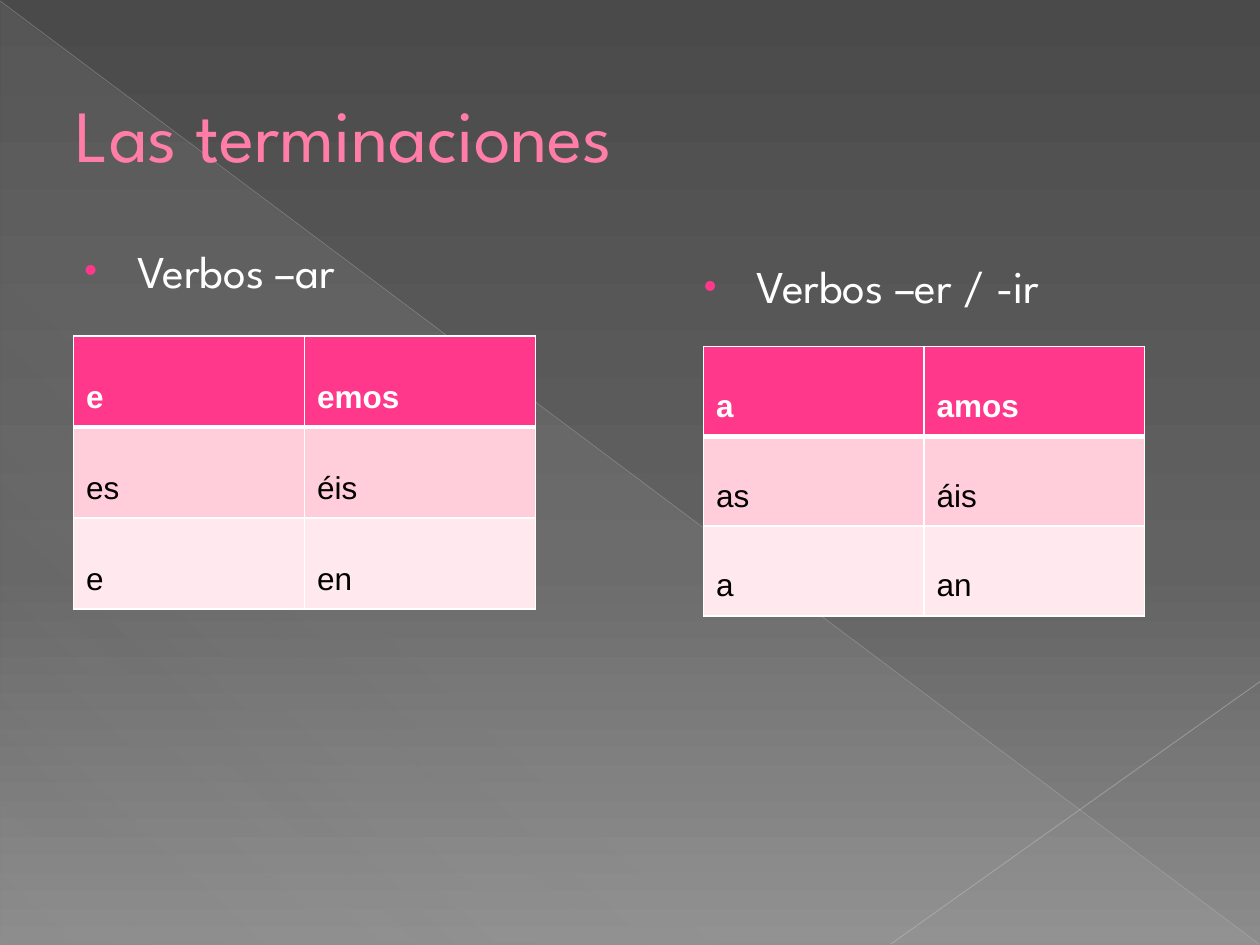
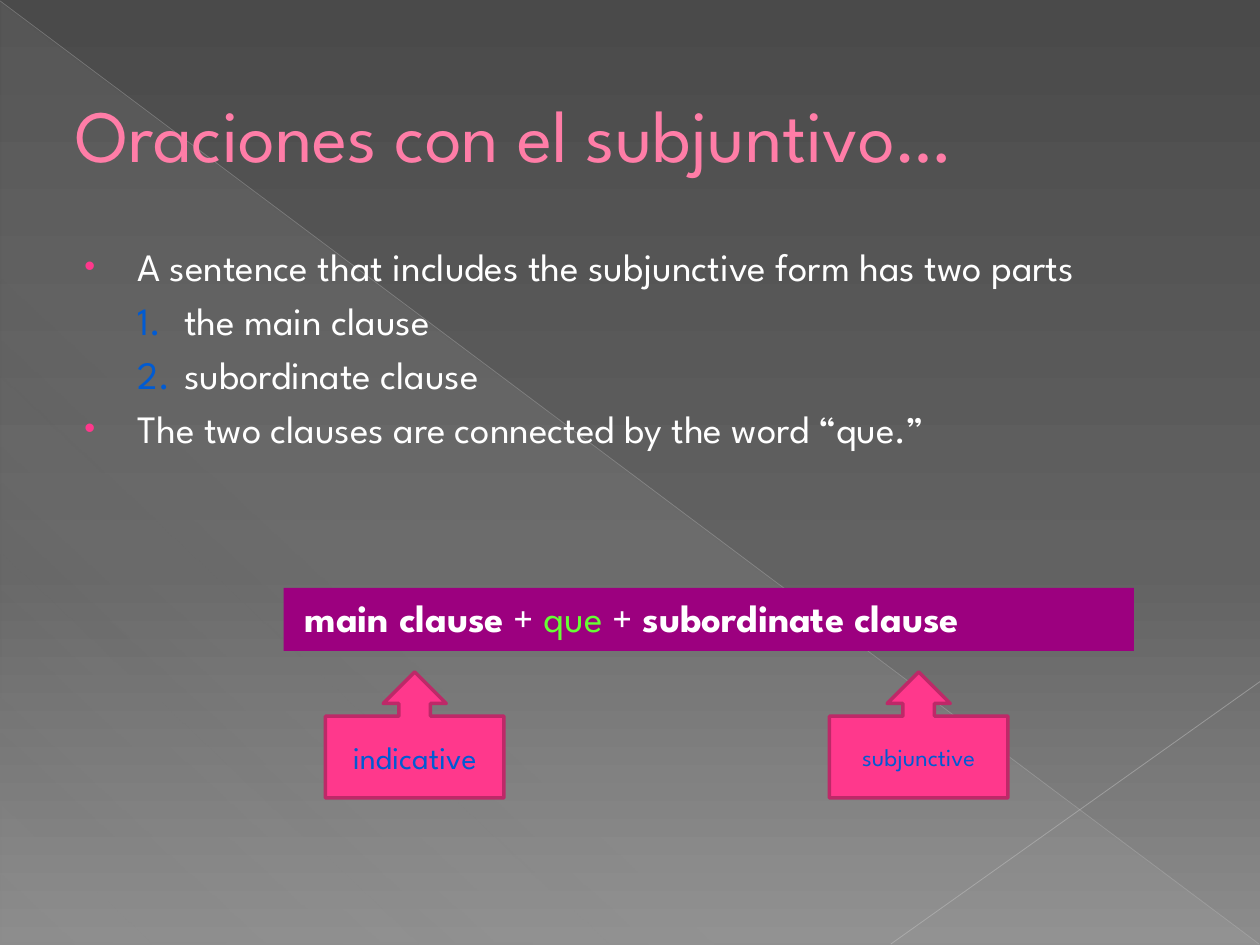
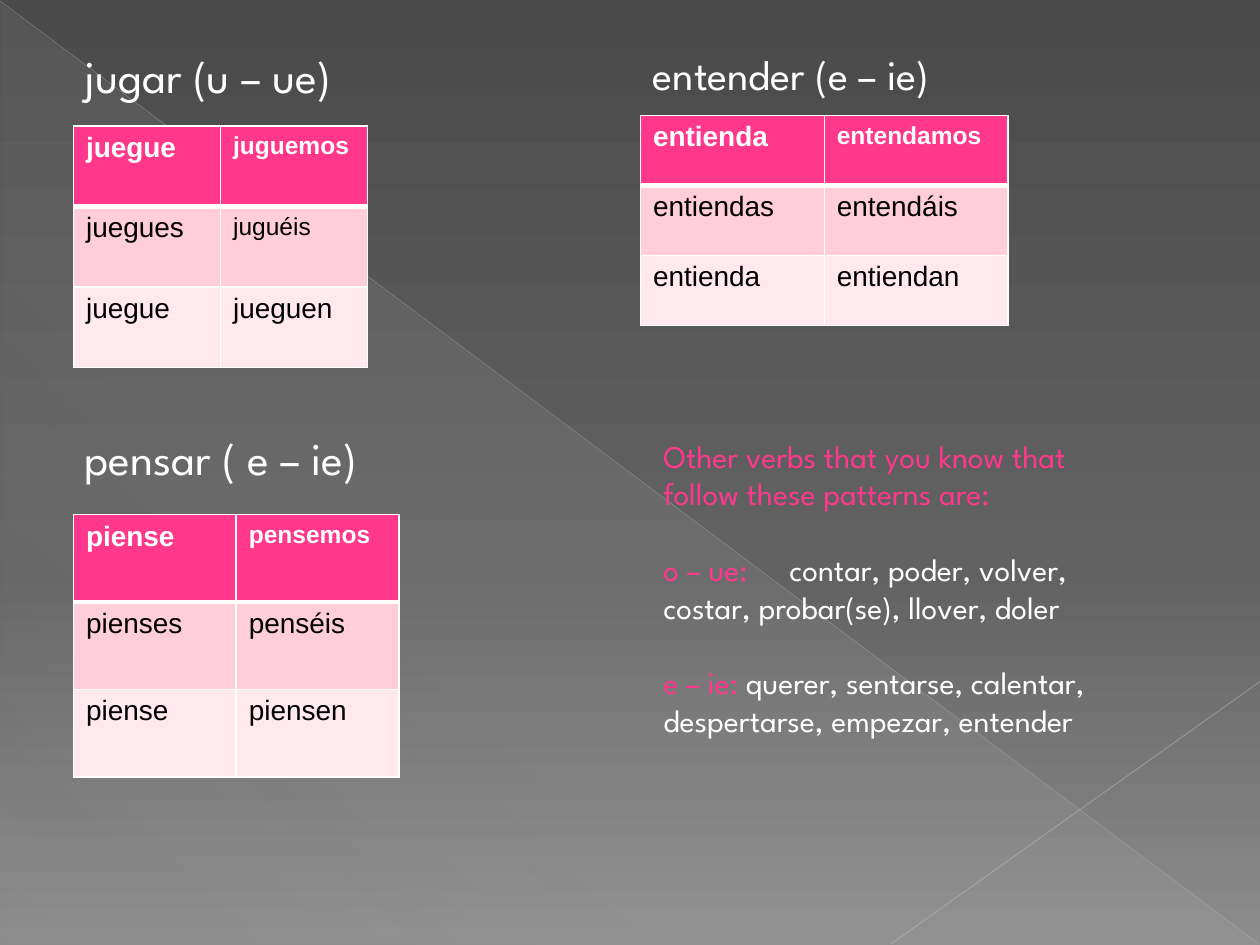
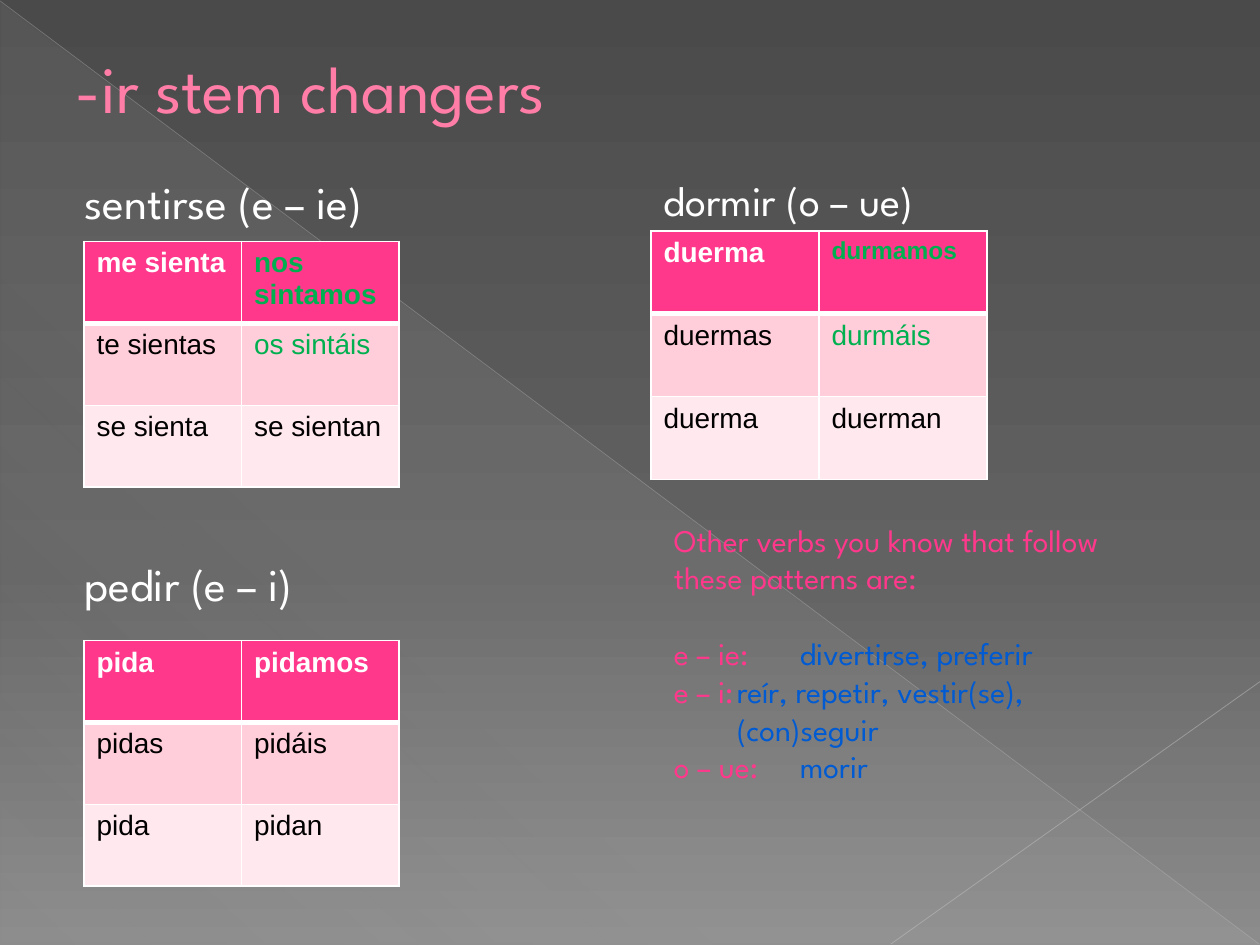
from lxml.etree import SubElement
from pptx import Presentation
from pptx.dml.color import RGBColor
from pptx.enum.shapes import MSO_CONNECTOR, MSO_SHAPE
from pptx.enum.text import MSO_ANCHOR, MSO_AUTO_SIZE, PP_ALIGN
from pptx.oxml import parse_xml
from pptx.oxml.ns import nsdecls, qn
from pptx.util import Pt

COLOURS = {
    "white": "FFFFFF",
    "black": "000000",
    "title": "FF7DA7",
    "title outline": "B12761",
    "pink": "FF388C",
    "pink edge": "BD2968",
    "odd row": "FFCEDA",
    "even row": "FFE8EE",
    "purple": "9C007F",
    "blue": "005BD3",
    "lime": "66FF33",
    "green": "00B050",
    "background top": "4A4A4A",
    "background middle": "626262",
    "background bottom": "8C8C8C",
    "triangle": "D2D2D2",
    "long line": "BFBFBF",
    "short line": "C6C6C6",
}
TEXT_FONT = "League Spartan"
TABLE_FONT = "Arial"
LINE_HEIGHT = 1.2
HANGING_MARGIN, HANGING_INDENT = 35.28, -30.24
NUMBERED_MARGIN = 62
TITLE_AND_CONTENT, TWO_CONTENT = 1, 3

# Verb forms that are set smaller, and those with the second stem change
SMALL_FORMS = {"juguemos", "juguéis", "pensemos", "entendamos", "durmamos"}
CHANGED_FORMS = {"nos sintamos", "os sintáis", "durmamos", "durmáis"}


def rgb(colour):
    return RGBColor.from_string(COLOURS[colour])


# Text

def format_run(run, size, colour="white", bold=False, font=TEXT_FONT):
    run.font.name = font
    run.font.size = Pt(size)
    run.font.bold = bold
    run.font.color.rgb = rgb(colour)


def write_parts(paragraph, parts, size):
    """Write (text, colour, bold) parts as the runs of one paragraph."""
    for text, colour, *bold in parts:
        run = paragraph.add_run()
        run.text = text
        format_run(run, size, colour, bool(bold))


def set_hanging(paragraph, size, bullet=False, margin=HANGING_MARGIN,
                indent=HANGING_INDENT, extra_space=0):
    paragraph.space_before = Pt(0.2 * size + extra_space)
    properties = paragraph._p.get_or_add_pPr()
    properties.set("marL", str(Pt(margin)))
    properties.set("indent", str(Pt(indent)))
    if bullet:
        colour = SubElement(properties, qn("a:buClr"))
        SubElement(colour, qn("a:srgbClr"), val=COLOURS["pink"])
        SubElement(properties, qn("a:buSzPct"), val="80000")
        SubElement(properties, qn("a:buChar"), char="•")
    else:
        SubElement(properties, qn("a:buNone"))


def place(shape, left, top, width, height):
    shape.left, shape.top = Pt(left), Pt(top)
    shape.width, shape.height = Pt(width), Pt(height)


def place_body(slide, index, *box):
    body = slide.placeholders[index]
    place(body, *box)
    body.text_frame.auto_size = MSO_AUTO_SIZE.NONE
    return body


def set_title(slide, text, size=42, height=110):
    title = slide.shapes.title
    place(title, 36, 21, 648, height)
    title.text_frame.text = text
    title.text_frame.auto_size = MSO_AUTO_SIZE.NONE
    paragraph = title.text_frame.paragraphs[0]
    paragraph.alignment = PP_ALIGN.LEFT
    run = paragraph.runs[0]
    format_run(run, size, "title")
    run.font._element.insert(0, parse_xml(
        f'<a:ln {nsdecls("a")} w="{Pt(0.5)}"><a:solidFill>'
        f'<a:srgbClr val="{COLOURS["title outline"]}"/></a:solidFill></a:ln>'))


def add_bullet_heading(slide, index, text, *box):
    body = place_body(slide, index, *box)
    body.text_frame.text = text
    paragraph = body.text_frame.paragraphs[0]
    set_hanging(paragraph, 26, bullet=True)
    format_run(paragraph.runs[0], 26)


def add_verb_headings(slide, upper, lower, *box):
    """Two headings in one body, with room for a table between them."""
    size = 26
    table_room = 5 * (LINE_HEIGHT + 0.2) * size
    body = place_body(slide, 1, *box)
    body.text_frame.text = f"{upper}\n{lower}"
    for paragraph, room in zip(body.text_frame.paragraphs, (0, table_room)):
        set_hanging(paragraph, size, extra_space=room)
        format_run(paragraph.runs[0], size)


def add_text_box(slide, paragraphs, size, *box):
    """Write (space before, parts) paragraphs in a text box."""
    text_box = slide.shapes.add_textbox(*map(Pt, box))
    frame = text_box.text_frame
    frame.word_wrap = True
    for number, (space, parts) in enumerate(paragraphs):
        paragraph = frame.add_paragraph() if number else frame.paragraphs[0]
        paragraph.space_before = Pt(space)
        write_parts(paragraph, parts, size)


# Tables

def set_borders(cell, bottom_width):
    properties = cell._tc.get_or_add_tcPr()
    widths = {"lnL": 1, "lnR": 1, "lnT": 1, "lnB": bottom_width}
    for position, (side, width) in enumerate(widths.items()):
        properties.insert(position, parse_xml(
            f'<a:{side} {nsdecls("a")} w="{Pt(width)}"><a:solidFill>'
            f'<a:srgbClr val="{COLOURS["white"]}"/></a:solidFill></a:{side}>'))


def add_verb_table(slide, rows, left, top, width, height, size=16, low_text=False):
    frame = slide.shapes.add_table(len(rows), 2, Pt(left), Pt(top), Pt(width), Pt(height))
    table = frame.table
    fills = ("pink", "odd row", "even row")
    for row_index, forms in enumerate(rows):
        header = row_index == 0
        table.rows[row_index].height = Pt(height / len(rows))
        for column_index, form in enumerate(forms):
            cell = table.cell(row_index, column_index)
            cell.fill.solid()
            cell.fill.fore_color.rgb = rgb(fills[row_index])
            set_borders(cell, 3 if header else 1)
            if low_text:
                cell.vertical_anchor = MSO_ANCHOR.BOTTOM
                cell.margin_bottom = Pt(7)
            cell.text_frame.text = form
            colour = "white" if header else "black"
            if form in CHANGED_FORMS:
                colour = "green"
            form_size = 14 if form in SMALL_FORMS else size
            format_run(cell.text_frame.paragraphs[0].runs[0], form_size,
                       colour, header, TABLE_FONT)


# Shared background

def set_gradient(fill, element, stops, angle):
    """Fill with (position, colour, opacity) stops; the angle runs clockwise."""
    fill.gradient()
    fill.gradient_angle = 360 - angle
    stop_list = element.find(".//" + qn("a:gsLst"))
    for stop in list(stop_list):
        stop_list.remove(stop)
    for position, colour, opacity in stops:
        stop = SubElement(stop_list, qn("a:gs"), pos=str(position * 1000))
        stop_colour = SubElement(stop, qn("a:srgbClr"), val=COLOURS[colour])
        SubElement(stop_colour, qn("a:alpha"), val=str(opacity * 1000))


def add_thin_line(slide, ends, colour, width, opacity):
    line = slide.shapes.add_connector(MSO_CONNECTOR.STRAIGHT, *map(Pt, ends))
    line.line.color.rgb = rgb(colour)
    line.line.width = Pt(width)
    line_colour = line.element.find(".//" + qn("a:srgbClr"))
    SubElement(line_colour, qn("a:alpha"), val=str(opacity * 1000))
    SubElement(line.element.spPr, qn("a:effectLst"))
    return line


def decorate_master(presentation, slide):
    """Draw the shared shapes on a slide and move them to the master."""
    master = presentation.slide_master
    set_gradient(master.background.fill, master.element, [
        (0, "background top", 100),
        (60, "background middle", 100),
        (100, "background bottom", 100)], 90)
    triangle = slide.shapes.add_shape(
        MSO_SHAPE.RIGHT_TRIANGLE, Pt(0.5), Pt(1.2), Pt(719.5), Pt(538.8))
    triangle.shadow.inherit = False
    triangle.line.fill.background()
    set_gradient(triangle.fill, triangle.element, [
        (0, "triangle", 10), (70, "triangle", 8), (100, "triangle", 1)], 133)
    decorations = [
        triangle,
        add_thin_line(slide, (0, 0.5, 719.5, 539.5), "long line", 0.39, 35),
        add_thin_line(slide, (720, 389.5, 509, 539.5), "short line", 0.47, 45),
    ]
    for position, shape in enumerate(decorations, start=2):
        master.shapes.element.insert(position, shape.element)


# Slides

def build_endings(slide):
    set_title(slide, "Las terminaciones")
    add_bullet_heading(slide, 1, "Verbos –ar", 36, 135, 318, 356)
    add_bullet_heading(slide, 2, "Verbos –er / -ir", 390, 144, 318, 356)
    add_verb_table(slide, [("e", "emos"), ("es", "éis"), ("e", "en")],
                   42, 192, 264, 156, size=18, low_text=True)
    add_verb_table(slide, [("a", "amos"), ("as", "áis"), ("a", "an")],
                   402, 198, 252, 154, size=18, low_text=True)


def add_callout(slide, text, size, left):
    callout = slide.shapes.add_shape(
        MSO_SHAPE.UP_ARROW_CALLOUT, Pt(left), Pt(384), Pt(102), Pt(72))
    callout.shadow.inherit = False
    callout.fill.solid()
    callout.fill.fore_color.rgb = rgb("pink")
    callout.line.color.rgb = rgb("pink edge")
    callout.line.width = Pt(2)
    callout.text_frame.text = text
    callout.text_frame.vertical_anchor = MSO_ANCHOR.MIDDLE
    paragraph = callout.text_frame.paragraphs[0]
    paragraph.alignment = PP_ALIGN.CENTER
    format_run(paragraph.runs[0], size, "blue")


def build_sentences(slide):
    size = 22.1
    set_title(slide, "Oraciones con el subjuntivo…")

    # Bulleted points with the two numbered clauses
    frame = place_body(slide, 1, 36, 135, 588, 182).text_frame
    points = [
        [("A sentence that includes the subjunctive form has two parts", "white")],
        [("1.", "blue"), ("\tthe main clause", "white")],
        [("2.", "blue"), ("\tsubordinate clause", "white")],
        [("The two clauses are connected by the word “que.”", "white")],
    ]
    for number, parts in enumerate(points):
        paragraph = frame.add_paragraph() if number else frame.paragraphs[0]
        if len(parts) > 1:
            set_hanging(paragraph, size, margin=NUMBERED_MARGIN,
                        indent=HANGING_MARGIN - NUMBERED_MARGIN)
        else:
            set_hanging(paragraph, size, bullet=True)
        write_parts(paragraph, parts, size)

    # Formula bar
    formula = place_body(slide, 2, 162, 336, 486, 36)
    formula.fill.solid()
    formula.fill.fore_color.rgb = rgb("purple")
    paragraph = formula.text_frame.paragraphs[0]
    set_hanging(paragraph, size)
    write_parts(paragraph, [
        ("main clause", "white", True), (" + ", "white"), ("que", "lime"),
        (" + ", "white"), ("subordinate clause", "white", True)], size)

    add_callout(slide, "indicative", 18, 186)
    add_callout(slide, "subjunctive", 14, 474)


def build_stem_changers(slide):
    title = slide.shapes.title.element
    title.getparent().remove(title)
    add_verb_headings(slide, "jugar (u – ue)", "pensar ( e – ie)", 36, 24, 252, 468)
    add_verb_table(slide, [("juegue", "juguemos"), ("juegues", "juguéis"),
                           ("juegue", "jueguen")], 42, 72, 168, 138)
    add_verb_table(slide, [("piense", "pensemos"), ("pienses", "penséis"),
                           ("piense", "piensen")], 42, 294, 186, 150)
    add_text_box(slide, [(0, [("entender (e – ie)", "white")])], 24, 366, 24, 282, 37)
    add_verb_table(slide, [("entienda", "entendamos"), ("entiendas", "entendáis"),
                           ("entienda", "entiendan")], 366, 66, 210, 120)
    size = 18
    gap = LINE_HEIGHT * size
    add_text_box(slide, [
        (0, [("Other verbs that you know that follow these patterns are:", "pink")]),
        (gap, [("o – ue:\t", "pink"),
               ("contar, poder, volver, costar, probar(se), llover, doler", "white")]),
        (gap, [("e – ie: ", "pink"),
               ("querer, sentarse, calentar, despertarse, empezar, entender", "white")]),
    ], size, 372, 246, 282, 204)


def build_ir_stem_changers(slide):
    set_title(slide, "-ir stem changers", 37.8, 57)
    add_verb_headings(slide, "sentirse (e – ie)", "pedir (e – i)", 36, 96, 318, 396)
    add_verb_table(slide, [("me sienta", "nos sintamos"), ("te sientas", "os sintáis"),
                           ("se sienta", "se sientan")], 48, 138, 180, 140.4)
    add_verb_table(slide, [("pida", "pidamos"), ("pidas", "pidáis"),
                           ("pida", "pidan")], 48, 366, 180, 140.4)
    add_text_box(slide, [(0, [("dormir (o – ue)", "white")])], 24, 372, 96, 288, 342)
    add_verb_table(slide, [("duerma", "durmamos"), ("duermas", "durmáis"),
                           ("duerma", "duerman")], 372, 132, 192, 142)
    size = 18
    add_text_box(slide, [
        (0, [("Other verbs you know that follow these patterns are:", "pink")]),
        (LINE_HEIGHT * size, [("e – ie:\t", "pink"), ("divertirse, preferir", "blue")]),
        (0, [("e – i:\t", "pink"), ("reír, repetir, vestir(se),", "blue")]),
        (0, [("\t(con)seguir", "blue")]),
        (0, [("o – ue:\t", "pink"), ("morir", "blue")]),
    ], size, 378, 294, 282, 160)


def main():
    presentation = Presentation()
    presentation.slide_width, presentation.slide_height = Pt(720), Pt(540)
    builders = [
        (build_endings, TWO_CONTENT),
        (build_sentences, TWO_CONTENT),
        (build_stem_changers, TITLE_AND_CONTENT),
        (build_ir_stem_changers, TITLE_AND_CONTENT),
    ]
    for build, layout in builders:
        build(presentation.slides.add_slide(presentation.slide_layouts[layout]))
    decorate_master(presentation, presentation.slides[0])
    presentation.save("out.pptx")


if __name__ == "__main__":
    main()
